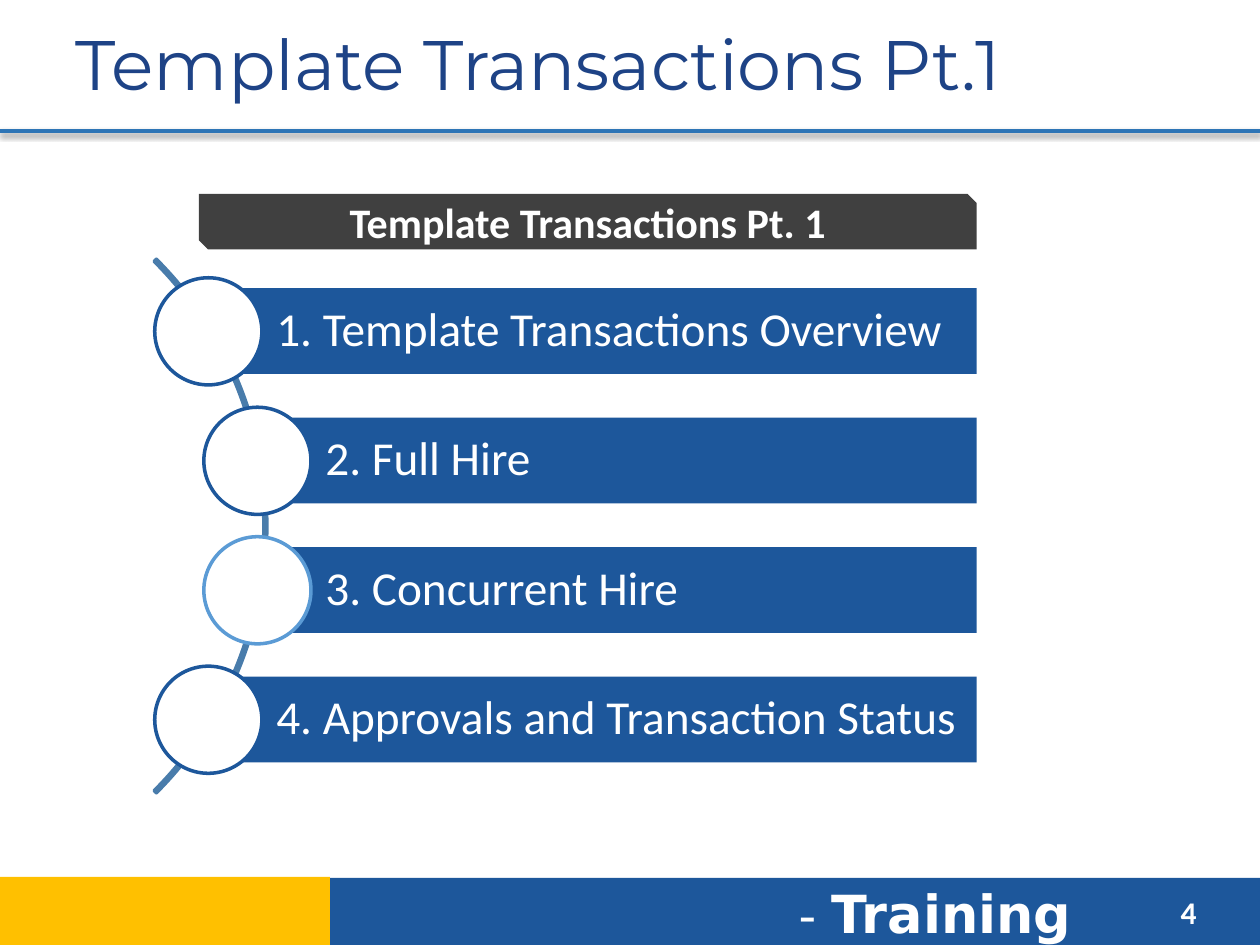
import pptx
import pptx.util
import pptx.dml.color
import pptx.enum.shapes
import pptx.enum.text
import pptx.oxml
import pptx.oxml.ns
from dataclasses import dataclass

Cm, Pt = pptx.util.Cm, pptx.util.Pt
Kind = pptx.enum.shapes.MSO_SHAPE
Align = pptx.enum.text.PP_ALIGN
Anchor = pptx.enum.text.MSO_ANCHOR


@dataclass(frozen=True)
class Theme:
    blue: str = "1D579B"
    navy: str = "1E4386"
    rule: str = "2E75B6"
    arc: str = "497CAB"
    sky: str = "5B9BD5"
    gold: str = "FFC000"
    dark: str = "404040"
    white: str = "FFFFFF"
    title: int = 40
    brand: int = 30
    dash: int = 28
    item: int = 27
    head: int = 24
    page: int = 18


look = Theme()

SHADOW = (
    '<a:effectLst %s><a:outerShdw blurRad="39370" dist="20320" dir="5400000">'
    '<a:srgbClr val="000000"><a:alpha val="38000"/></a:srgbClr>'
    "</a:outerShdw></a:effectLst>" % pptx.oxml.ns.nsdecls("a")
)


def apply(thing, values):
    for name, value in values.items():
        setattr(thing, name, value)


def color(code):
    return pptx.dml.color.RGBColor.from_string(code)


def place(box):
    return [Cm(round(part, 2)) for part in box]


def shape(slide, kind, box, fill=None, line=None):
    item = slide.shapes.add_shape(kind, *place(box))
    item.shadow.inherit = False
    if fill:
        item.fill.solid()
        item.fill.fore_color.rgb = color(fill)
    else:
        item.fill.background()
    if line:
        item.line.color.rgb = color(line)
        item.line.width = Pt(2)
    else:
        item.line.fill.background()
    return item


def write(item, runs, frame=None, para=None):
    text = item.text_frame
    apply(text, {"word_wrap": True, **(frame or {})})
    line = text.paragraphs[0]
    apply(line, {"alignment": Align.LEFT, **(para or {})})
    for words, font, size, bold, tint in runs:
        run = line.add_run()
        run.text = words
        apply(run.font, {"name": font, "size": Pt(size), "bold": bold})
        run.font.color.rgb = color(tint)


def label(slide, box, runs, frame=None):
    write(slide.shapes.add_textbox(*place(box)), runs, frame)


def footer(slide, box):
    x, y, w, h = box
    split = 6.63
    shape(slide, Kind.RECTANGLE, (x + split, y, w - split, h), look.blue)
    label(slide, (x + 15.85, y - 0.07, 7.11, 1.55), [
        ("- ", "DejaVu Sans", look.dash, False, look.white),
        ("Training", "DejaVu Sans", look.brand, True, look.white),
    ])
    label(slide, (x + 23.55, y + 0.18, 1.52, 1.02),
          [("4", "Calibri", look.page, True, look.white)])
    shape(slide, Kind.RECTANGLE, (x, y - 0.02, split + 0.02, h + 0.02), look.gold)


def header(slide, box):
    x, y, w, h = box
    ends = [Cm(part) for part in (x, y + h, x + w, y + h)]
    rule = slide.shapes.add_connector(pptx.enum.shapes.MSO_CONNECTOR.STRAIGHT, *ends)
    rule.line.color.rgb = color(look.rule)
    rule.line.width = Pt(2.25)
    rule.element.spPr.append(pptx.oxml.parse_xml(SHADOW))
    label(slide, (x + 1.27, y + 0.08, w - 2.54, 2.36),
          [("Template Transactions Pt.1", "Montserrat", look.title, False, look.navy)],
          {"vertical_anchor": Anchor.MIDDLE})


def agenda(slide, box, name, rows):
    x, y, w, h = box
    size, tall, gap = 2.16, 1.73, 2.61
    arc = shape(slide, Kind.BLOCK_ARC, (x - 12.95, y - 0.91, 15.21, 15.21), None, look.arc)
    for spot, value in enumerate((189, 27, 0.004)):
        arc.adjustments[spot] = value
    frame = {"vertical_anchor": Anchor.MIDDLE, "margin_left": Cm(1.37)}
    frame.update({"margin_" + side: Cm(0.18) for side in ("right", "top", "bottom")})
    for spot, (words, shift, edge) in enumerate(rows):
        left = x + size / 2 + shift
        mid = y + 2.77 + spot * gap
        bar = shape(slide, Kind.RECTANGLE, (left, mid - tall / 2, x + w - left, tall), look.blue)
        write(bar, [(words, "Calibri", look.item, False, look.white)],
              frame, {"line_spacing": 0.9})
        shape(slide, Kind.OVAL, (left - size / 2, mid - size / 2, size, size),
              look.white, edge)
    banner = shape(slide, Kind.SNIP_2_DIAG_RECTANGLE, (x + 0.89, y, w - 0.89, 1.12), look.dark)
    write(banner, [(name, "Calibri", look.head, True, look.white)],
          {"vertical_anchor": Anchor.MIDDLE}, {"alignment": Align.CENTER})


def main():
    deck = pptx.Presentation()
    apply(deck, {"slide_width": Cm(25.4), "slide_height": Cm(19.05)})
    slide = deck.slides.add_slide(deck.slide_layouts[6])
    footer(slide, (0, 17.7, 25.4, 1.35))
    header(slide, (0, 0, 25.4, 2.64))
    agenda(slide, (3.12, 3.91, 16.57, 12.3), "Template Transactions Pt. 1", [
        ("1. Template Transactions Overview", 0, look.blue),
        ("2. Full Hire", 0.99, look.blue),
        ("3. Concurrent Hire", 0.99, look.sky),
        ("4. Approvals and Transaction Status", 0, look.blue),
    ])
    deck.save("out.pptx")


if __name__ == "__main__":
    main()
